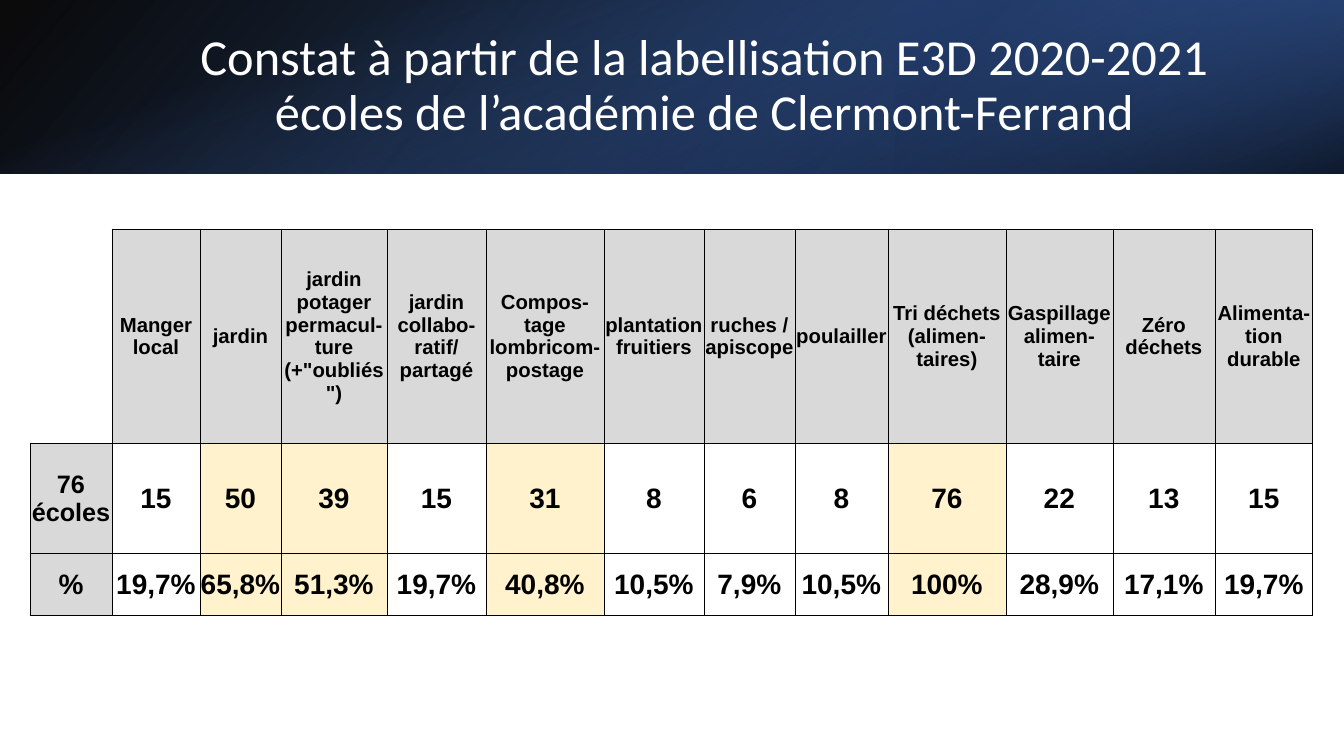
from lxml import etree
from pptx import Presentation
from pptx.dml.color import RGBColor
from pptx.enum import shapes, text
from pptx.oxml import ns
from pptx.util import Emu, Pt

PX = 9144000 / 1008  # EMU per px
GREY, CREAM, WHITE, BLACK = "D9D9D9", "FFF2CC", "FFFFFF", "000000"


def write(frame, content, size, font="Arial", color=BLACK, bold=False, spacing=None):
    frame.word_wrap = True
    frame.vertical_anchor = text.MSO_ANCHOR.MIDDLE
    para = frame.paragraphs[0]
    para.text = content
    para.alignment = text.PP_ALIGN.CENTER
    para.line_spacing = spacing
    for span in para.runs:
        span.font.size, span.font.name, span.font.bold = Pt(size), font, bold
        span.font.color.rgb = RGBColor.from_string(color)


def add_xml(parent, index, markup):
    """Insert DrawingML markup, written with the prefix a, at the given index."""
    root = etree.fromstring(f'<r xmlns:a="{ns.nsuri("a")}">{markup}</r>')
    parent.insert(index, root[0])


deck = Presentation()
deck.slide_width, deck.slide_height = Emu(12192000), Emu(6858000)
page = deck.slides.add_slide(deck.slide_layouts[6])

# Banner: three overlaid gradients, stops given as (position %, colour, opacity %)
banner_layers = [
    ((0, 0, 1344, 174), 0, True, 140, [(0, BLACK, 96), (100, "2F5597", 100)]),
    ((896, 0, 448, 174), 180, True, 320, [(19, "203864", 68), (100, "4472C4", 79)]),
    ((585, -585, 174, 1344), 90, False, 340, [(23, "4472C4", 0), (99, BLACK, 74)]),
]
for place, rotation, flipped, angle, stops in banner_layers:
    layer = page.shapes.add_shape(
        shapes.MSO_SHAPE.RECTANGLE, *(Emu(round(n * PX)) for n in place))
    layer.rotation = rotation
    layer.shadow.inherit = False
    layer.line.fill.background()
    props = layer.element.spPr
    if flipped:
        props.xfrm.set("flipH", "1")
    stop_xml = "".join(
        f'<a:gs pos="{pos * 1000}"><a:srgbClr val="{color}">'
        f'<a:alpha val="{opacity * 1000}"/></a:srgbClr></a:gs>'
        for pos, color, opacity in stops)
    add_xml(props, 2, f'<a:gradFill rotWithShape="1"><a:gsLst>{stop_xml}</a:gsLst>'
                      f'<a:lin ang="{angle * 60000}" scaled="0"/></a:gradFill>')

title = page.shapes.add_textbox(*(Emu(round(n * PX)) for n in (151, 38, 1107, 97)))
write(title.text_frame,
      "Constat à partir de la labellisation E3D 2020-2021\v"
      "écoles de l’académie de Clermont-Ferrand",
      36, font="Calibri", color=WHITE, spacing=0.9)

themes = [
    ("Manger local", 88, 15, "19,7%"),
    ("jardin", 81, 50, "65,8%"),
    ('jardin potager permacul-ture (+"oubliés")', 106, 39, "51,3%"),
    ("jardin collabo-ratif/ partagé", 99, 15, "19,7%"),
    ("Compos-tage lombricom-postage", 118, 31, "40,8%"),
    ("plantation fruitiers", 100, 8, "10,5%"),
    ("ruches / apiscope", 91, 6, "7,9%"),
    ("poulailler", 93, 8, "10,5%"),
    ("Tri déchets (alimen-taires)", 118, 76, "100%"),
    ("Gaspillage alimen-taire", 107, 22, "28,9%"),
    ("Zéro déchets", 102, 13, "17,1%"),
    ("Alimenta-tion durable", 98, 15, "19,7%"),
]
names, widths, counts, shares = zip(*themes)
rows = [("", *names), ("76 écoles", *counts), ("%", *shares)]
widths = (82, *widths)
heights = (214, 110, 62)

place = (30, 229, sum(widths), sum(heights))
table = page.shapes.add_table(
    len(rows), len(widths), *(Emu(round(n * PX)) for n in place)).table
table.first_row = table.horz_banding = False
for column, width in zip(table.columns, widths):
    column.width = Emu(round(width * PX))
for row, height in zip(table.rows, heights):
    row.height = Emu(round(height * PX))

for r, row in enumerate(rows):
    for c, value in enumerate(row):
        cell = table.cell(r, c)
        corner = r == 0 and c == 0
        cell.margin_left = cell.margin_right = cell.margin_bottom = 0
        cell.margin_top = Emu(round(PX))
        if corner:
            cell.fill.background()
        else:
            size = 14.5 if r == 0 else 18 if (r, c) == (1, 0) else 20
            write(cell.text_frame, str(value), size, bold=True)
            cell.vertical_anchor = text.MSO_ANCHOR.MIDDLE
            # Themes present in more than 30 schools are highlighted
            color = GREY if r == 0 or c == 0 else CREAM if counts[c - 1] > 30 else WHITE
            cell.fill.solid()
            cell.fill.fore_color.rgb = RGBColor.from_string(color)
        for index, side in enumerate("RB" if corner else "LRTB"):
            add_xml(cell._tc.tcPr, index,
                    f'<a:ln{side} w="6350"><a:solidFill><a:srgbClr val="{BLACK}"/>'
                    f'</a:solidFill></a:ln{side}>')

deck.save("out.pptx")
